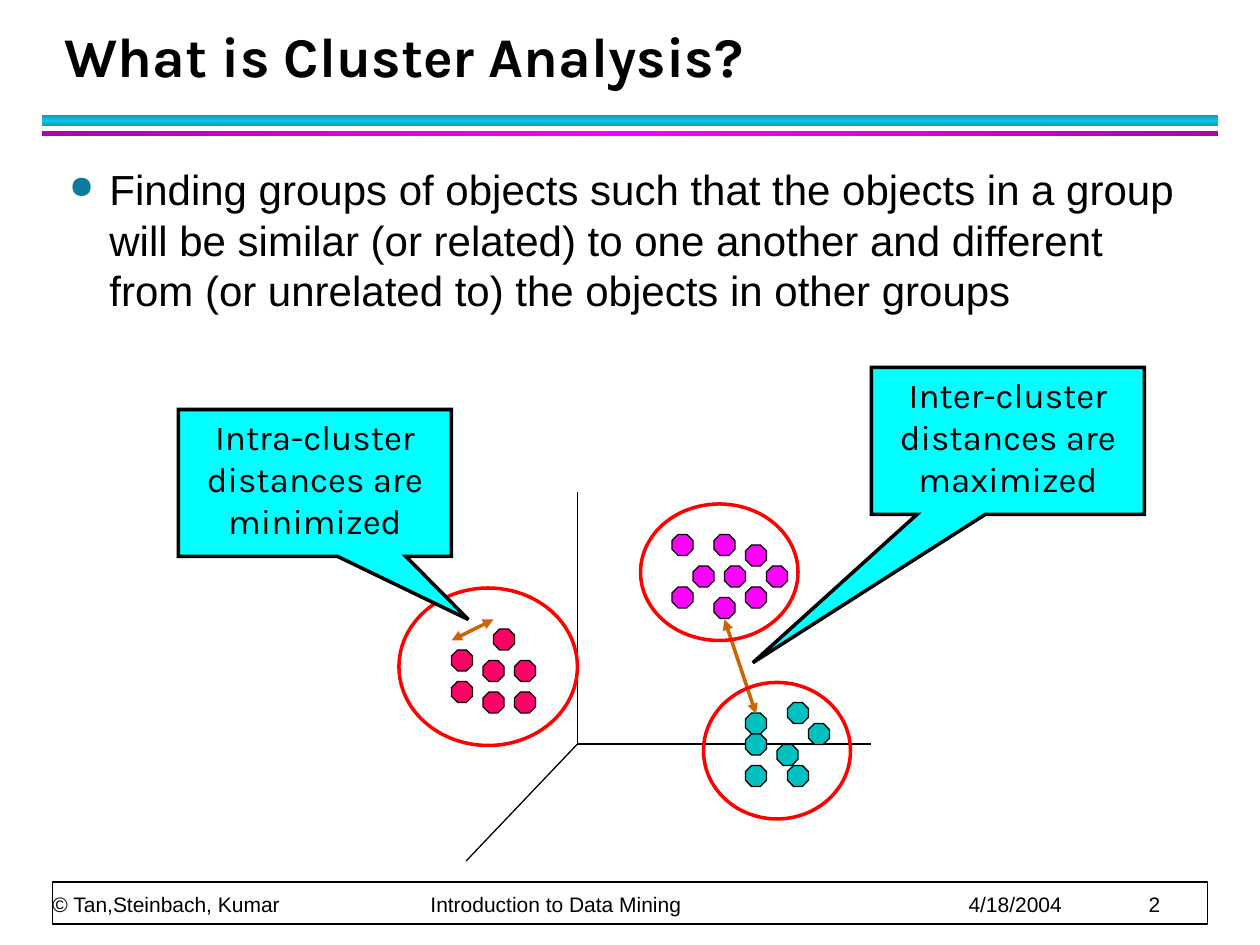
from copy import deepcopy
from typing import NamedTuple, Optional

from lxml.etree import SubElement
from pptx import Presentation
from pptx.dml.color import RGBColor
from pptx.enum.shapes import MSO_CONNECTOR, MSO_SHAPE as Shape
from pptx.enum.text import MSO_ANCHOR as Anchor, PP_ALIGN as Align
from pptx.oxml.ns import qn
from pptx.util import Inches, Pt

BLACK = RGBColor(0x00, 0x00, 0x00)
WHITE = RGBColor(0xFF, 0xFF, 0xFF)
CYAN = RGBColor(0x00, 0xFF, 0xFF)
MAGENTA = RGBColor(0xFF, 0x00, 0xFF)
ROSE = RGBColor(0xFF, 0x00, 0x66)
TEAL = RGBColor(0x00, 0xC0, 0xC0)
RED = RGBColor(0xFF, 0x00, 0x00)
BROWN = RGBColor(0xCC, 0x66, 0x00)
SKY, SKY_EDGE = RGBColor(0x12, 0xC2, 0xE9), RGBColor(0x0E, 0x9B, 0xBA)
PURPLE_EDGE = RGBColor(0xB2, 0x00, 0xB2)

CELL = 1 / 12  # the diagram sits on a grid of twelve cells to the inch
DOT_SIZE = 2
DOT_SHIFT = -0.1  # dots sit a little above their grid row


class Box(NamedTuple):
    """Left, top, width and height in grid cells."""
    left: float
    top: float
    width: float
    height: float

    def lengths(self):
        return [Inches(value * CELL) for value in self]


class Cluster(NamedTuple):
    color: RGBColor
    dots: list[tuple[int, int]]
    ring: Box


class Callout(NamedTuple):
    words: str
    box: Box
    tip: tuple[float, float]


class Link(NamedTuple):
    start: tuple[float, float]
    end: tuple[float, float]
    color: RGBColor = BLACK
    weight: float = 0.75
    arrows: bool = False


ORIGIN = (55, 70.86)
AXES = [
    Link((55, 46.86), ORIGIN),
    Link(ORIGIN, (83, 70.86)),
    Link(ORIGIN, (44.4, 82)),
]
CLUSTERS = [
    Cluster(MAGENTA, [(66, 54), (69, 54), (68, 51), (68, 57), (73, 54),
                      (71, 52), (64, 51), (71, 56), (64, 56)], Box(61, 48, 15, 13)),
    Cluster(ROSE, [(43, 62), (46, 63), (46, 66), (49, 63), (47, 60),
                   (49, 66), (43, 65)], Box(38, 56, 17, 15)),
    Cluster(TEAL, [(71, 68), (77, 69), (74, 71), (71, 73), (75, 73),
                   (71, 70), (75, 67)], Box(67, 65, 14, 13)),
]
INTER_ARROW = Link((72, 68), (69, 59), BROWN, 2, True)
INTRA_ARROW = Link((43, 61), (47, 59), BROWN, 2, True)
INTER_CALLOUT = Callout("Inter-cluster distances are maximized",
                        Box(83, 35, 26, 14), (-0.935, 1.509))
INTRA_CALLOUT = Callout("Intra-cluster distances are minimized",
                        Box(17, 39, 26, 14), (0.562, 0.929))


def add_figure(slide, kind, box: Box, fill: Optional[RGBColor] = None,
               line: Optional[RGBColor] = None, weight: float = 0.75):
    figure = slide.shapes.add_shape(kind, *box.lengths())
    figure.shadow.inherit = False
    if fill is None:
        figure.fill.background()
    else:
        figure.fill.solid()
        figure.fill.fore_color.rgb = fill
    if line is None:
        figure.line.fill.background()
    else:
        figure.line.color.rgb = line
        figure.line.width = Pt(weight)
    return figure


def add_band(slide, box: Box, edge: RGBColor, middle: RGBColor, angle: int):
    """Draw a bar whose gradient runs from edge to middle and back."""
    band = add_figure(slide, Shape.RECTANGLE, box)
    band.fill.gradient()
    band.fill.gradient_angle = angle
    first, last = band.fill.gradient_stops
    first.color.rgb, last.color.rgb = middle, edge
    first.position, last.position = 0.5, 1
    stops = band.element.spPr.find(qn("a:gradFill")).find(qn("a:gsLst"))
    start = deepcopy(stops[-1])
    start.set("pos", "0")
    stops.insert(0, start)


def add_link(slide, link: Link):
    ends = [Inches(value * CELL) for value in link.start + link.end]
    connector = slide.shapes.add_connector(MSO_CONNECTOR.STRAIGHT, *ends)
    connector.line.color.rgb = link.color
    connector.line.width = Pt(link.weight)
    if link.arrows:
        outline = connector.line._get_or_add_ln()
        for end in ("a:headEnd", "a:tailEnd"):
            SubElement(outline, qn(end), type="triangle")
    SubElement(connector.element.spPr, qn("a:effectLst"))


def write(figure, words: str, *, size: float, font: str, spacing: float,
          bold: bool = False, align=Align.LEFT, anchor=Anchor.TOP, margin: bool = True):
    frame = figure.text_frame
    frame.word_wrap = True
    frame.vertical_anchor = anchor
    frame.margin_left = frame.margin_right = Inches(0.1 if margin else 0)
    frame.margin_top = frame.margin_bottom = Inches(0.05 if margin else 0)
    paragraph = frame.paragraphs[0]
    paragraph.alignment = align
    paragraph.line_spacing = Pt(spacing)
    run = paragraph.add_run()
    run.text = words
    run.font.name, run.font.size, run.font.bold = font, Pt(size), bold
    run.font.color.rgb = BLACK
    return paragraph


def add_bullet(paragraph):
    props = paragraph._p.get_or_add_pPr()
    props.set("marL", str(Inches(0.32)))
    props.set("indent", str(-Inches(0.32)))
    SubElement(SubElement(props, qn("a:buClr")), qn("a:srgbClr"), val="0C7B9C")
    SubElement(props, qn("a:buSzPct"), val="75000")
    SubElement(props, qn("a:buChar"), char="●")


def add_tab_stops(paragraph, *stops: float):
    tabs = SubElement(paragraph._p.get_or_add_pPr(), qn("a:tabLst"))
    for stop in stops:
        SubElement(tabs, qn("a:tab"), pos=str(Inches(stop)), algn="l")


def add_callout(slide, callout: Callout):
    balloon = add_figure(slide, Shape.RECTANGULAR_CALLOUT, callout.box, CYAN, BLACK, 2)
    balloon.adjustments[0], balloon.adjustments[1] = callout.tip
    SubElement(balloon.line._get_or_add_ln(), qn("a:miter"), lim="800000")
    write(balloon, callout.words, size=20, font="Karla", spacing=24, align=Align.CENTER)


def add_frame(slide):
    add_band(slide, Box(4, 11, 112, 1), SKY_EDGE, SKY, 90)
    add_band(slide, Box(4, 12.5, 112, 0.5), PURPLE_EDGE, MAGENTA, 0)
    add_figure(slide, Shape.RECTANGLE, Box(5, 84, 110, 4), WHITE, BLACK, 1)
    footer = slide.shapes.add_textbox(*Box(5, 84, 109.8, 3.33).lengths())
    line = write(footer, "© Tan,Steinbach, Kumar\tIntroduction to Data Mining\t4/18/2004\t2",
                 size=12, font="Arial", spacing=20, anchor=Anchor.BOTTOM, margin=False)
    add_tab_stops(line, 3, 7.27, 8.7)


def add_heading(slide):
    title = slide.shapes.add_textbox(*Box(5, 2, 108.75, 7).lengths())
    write(title, "What is Cluster Analysis?", size=32, font="Karla", spacing=36,
          bold=True, anchor=Anchor.BOTTOM)
    body = slide.shapes.add_textbox(*Box(5.4, 15, 109.2, 17).lengths())
    add_bullet(write(
        body, "Finding groups of objects such that the objects in a group will be similar "
        "(or related) to one another and different from (or unrelated to) the objects "
        "in other groups", size=24, font="Arial", spacing=28.8))


def add_diagram(slide):
    for axis in AXES:
        add_link(slide, axis)
    for cluster in CLUSTERS:
        for column, row in cluster.dots:
            add_figure(slide, Shape.OCTAGON,
                       Box(column, row + DOT_SHIFT, DOT_SIZE, DOT_SIZE), cluster.color, BLACK)
    add_link(slide, INTER_ARROW)
    add_callout(slide, INTER_CALLOUT)
    for cluster in CLUSTERS:
        add_figure(slide, Shape.OVAL, cluster.ring, line=RED, weight=2)
    add_link(slide, INTRA_ARROW)
    add_callout(slide, INTRA_CALLOUT)


def main():
    deck = Presentation()
    deck.slide_width, deck.slide_height = Inches(10), Inches(7.5)
    slide = deck.slides.add_slide(deck.slide_layouts[6])
    add_frame(slide)
    add_heading(slide)
    add_diagram(slide)
    deck.save("out.pptx")


if __name__ == "__main__":
    main()
